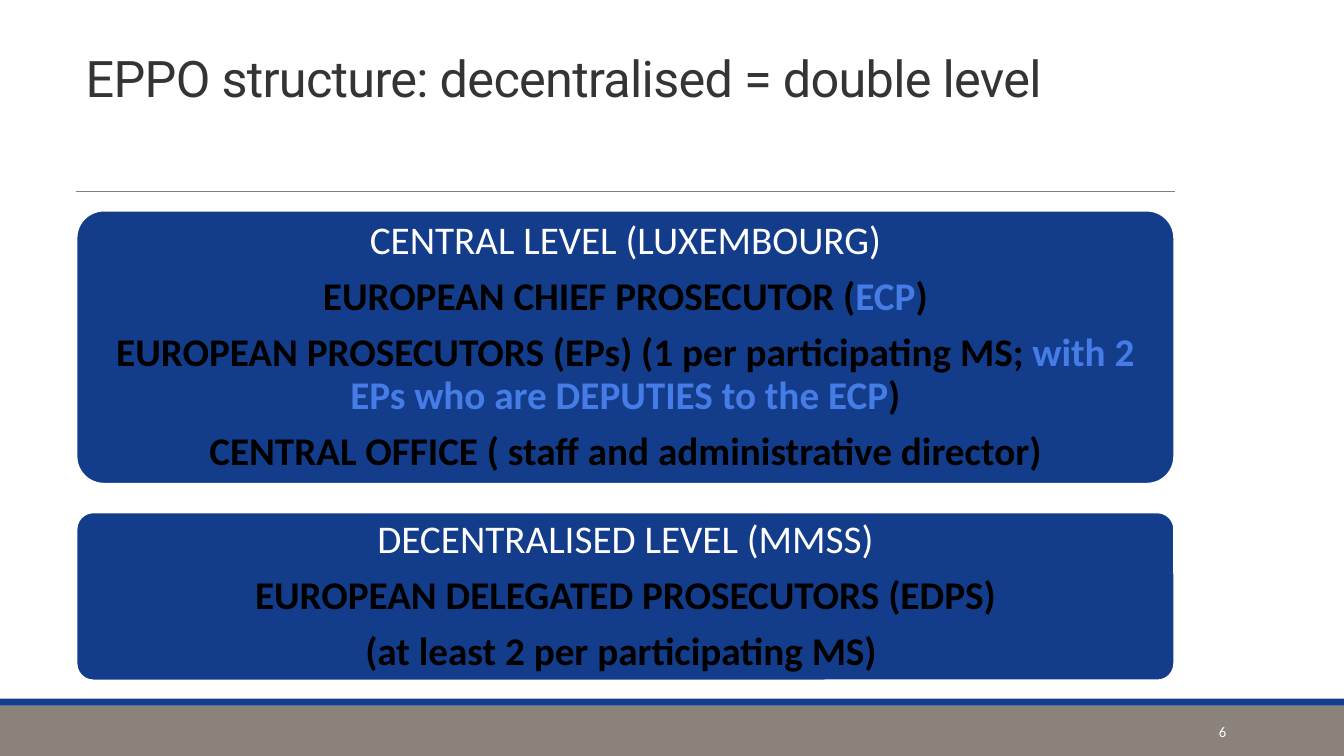
from pptx import Presentation
from pptx.dml.color import RGBColor
from pptx.enum.shapes import MSO_CONNECTOR as LINE, MSO_SHAPE as SHAPE
from pptx.enum.text import MSO_ANCHOR as ANCHOR, MSO_AUTO_SIZE as FIT, PP_ALIGN as ALIGN
from pptx.oxml.ns import qn
from pptx.util import Pt
from lxml import etree

NAVY = RGBColor(0x13, 0x3C, 0x8B)
SKY = RGBColor(0x45, 0x7C, 0xE6)
TAUPE = RGBColor(0x8B, 0x82, 0x7B)
GRAY = RGBColor(0x80, 0x80, 0x80)
DARK = RGBColor(0x35, 0x34, 0x33)
BLACK = RGBColor(0, 0, 0)
WHITE = RGBColor(0xFF, 0xFF, 0xFF)


def block(kind, left, top, width, height, fill):
    shape = slide.shapes.add_shape(kind, Pt(left), Pt(top), Pt(width), Pt(height))
    shape.shadow.inherit = False
    shape.fill.solid()
    shape.fill.fore_color.rgb = fill
    shape.line.fill.background()
    return shape


def style(run, name, size, color, bold=False):
    font = run.font
    font.name, font.size, font.bold = name, Pt(size), bold
    font.color.rgb = color


deck = Presentation()
deck.slide_width, deck.slide_height = Pt(960), Pt(540)
slide = deck.slides.add_slide(deck.slide_layouts[5])

block(SHAPE.RECTANGLE, 0, 504, 960, 36, TAUPE)
block(SHAPE.RECTANGLE, 0, 499, 960, 5, NAVY)

rule = slide.shapes.add_connector(LINE.STRAIGHT, Pt(54), Pt(136.6), Pt(839), Pt(136.6))
rule.line.color.rgb = GRAY
rule.line.width = Pt(0.5)
etree.SubElement(rule.element.spPr, qn("a:effectLst"))

title = slide.shapes.title
title.left, title.top, title.width, title.height = Pt(54), Pt(18.7), Pt(785), Pt(114.5)
frame = title.text_frame
frame.text = "EPPO structure: decentralised = double level\v"
frame.auto_size = FIT.NONE
frame.vertical_anchor = ANCHOR.BOTTOM
para = frame.paragraphs[0]
para.alignment = ALIGN.LEFT
para.line_spacing = 0.85
for run in para.runs:
    style(run, "Roboto", 36, DARK)
    run.font._element.set("spc", "-50")

levels = [
    (150.5, 195, [
        [("CENTRAL LEVEL (LUXEMBOURG)", WHITE)],
        [("EUROPEAN CHIEF PROSECUTOR (", BLACK), ("ECP", SKY), (")", BLACK)],
        [("EUROPEAN PROSECUTORS (EPs) (1 per participating MS; ", BLACK),
         ("with 2 EPs who are DEPUTIES to the ECP", SKY), (")", BLACK)],
        [("CENTRAL OFFICE ( staff and administrative director)", BLACK)],
    ]),
    (366, 120, [
        [("DECENTRALISED LEVEL (MMSS)", WHITE)],
        [("EUROPEAN DELEGATED PROSECUTORS (EDPS)", BLACK)],
        [("(at least 2 per participating MS) ", BLACK)],
    ]),
]
for top, height, lines in levels:
    card = block(SHAPE.ROUNDED_RECTANGLE, 54.7, top, 784, height, NAVY)
    card.adjustments[0] = 0.1
    card.line.color.rgb = WHITE
    card.line.width = Pt(1.25)
    frame = card.text_frame
    frame.word_wrap = True
    frame.vertical_anchor = ANCHOR.MIDDLE
    frame.margin_left = frame.margin_right = Pt(8.64)
    frame.margin_top = frame.margin_bottom = Pt(8.64)
    for i, line in enumerate(lines):
        para = frame.add_paragraph() if i else frame.paragraphs[0]
        para.alignment = ALIGN.CENTER
        para.line_spacing = 0.9
        para.space_after = Pt(9.8)
        for text, color in line:
            run = para.add_run()
            run.text = text
            style(run, "Calibri", 28, color, color != WHITE)

page = slide.shapes.add_textbox(Pt(780), Pt(508.3), Pt(103), Pt(28.8))
frame = page.text_frame
frame.word_wrap = True
frame.vertical_anchor = ANCHOR.MIDDLE
frame.text = "6"
para = frame.paragraphs[0]
para.alignment = ALIGN.RIGHT
style(para.runs[0], "Calibri", 10.5, WHITE)

deck.save("out.pptx")
